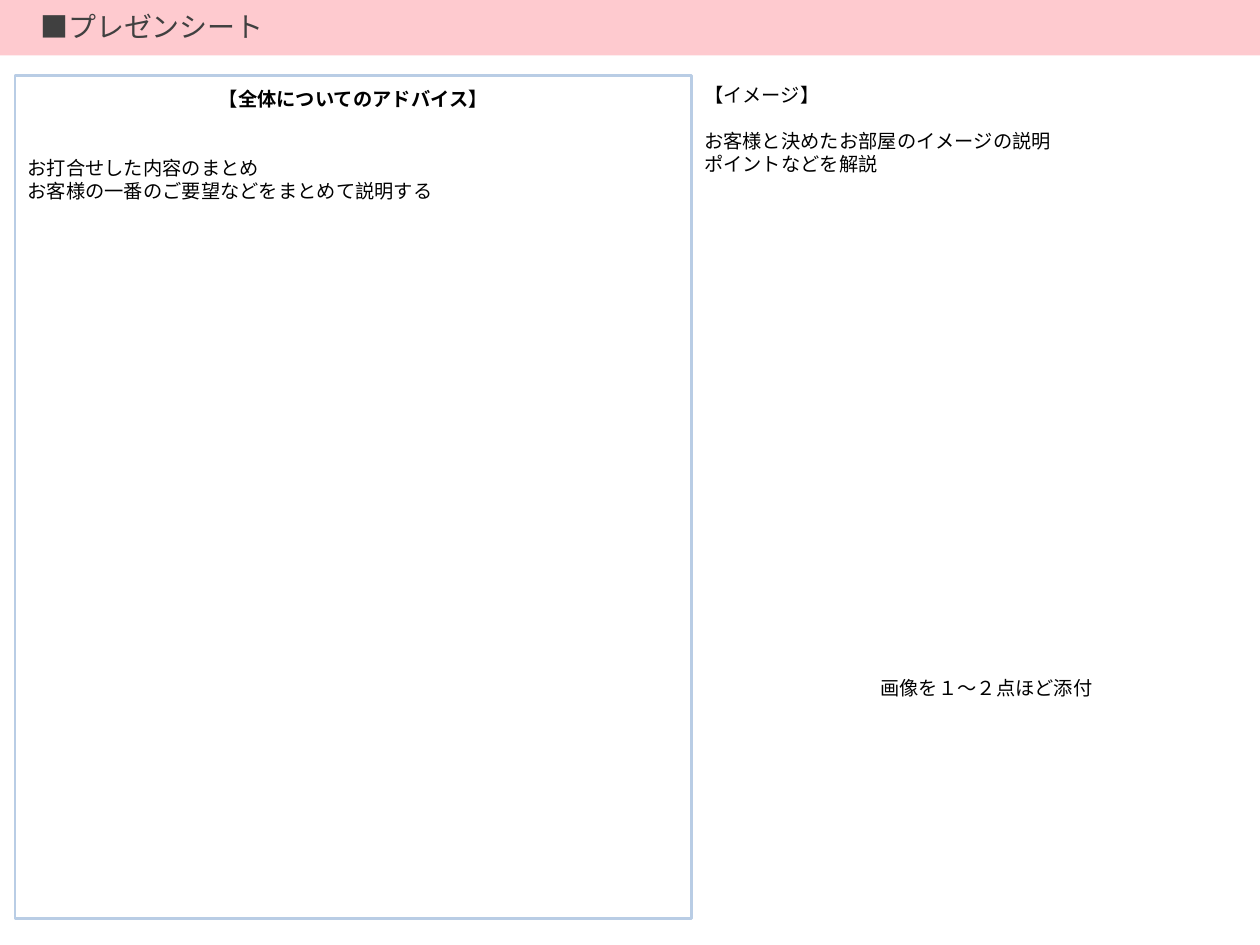
from pptx import Presentation
from pptx.dml.color import RGBColor
from pptx.enum.shapes import MSO_SHAPE
from pptx.enum.text import MSO_ANCHOR, PP_ALIGN
from pptx.oxml.ns import qn
from pptx.util import Inches, Pt
from lxml import etree

FONT = "Noto Sans CJK JP"
SIZE, PITCH = 11, 13.2  # body text size and line pitch, points
WIDTH, HEIGHT = 10, 7.5
LEFT, SPLIT = 0.12, 5.49  # edges of the advice column

TITLE = "■プレゼンシート"
# box, then paragraphs: text, bold, centred, lines of space before
TEXTS = [
    ((LEFT, 0.64, SPLIT - LEFT, 1.03), [
        ("【全体についてのアドバイス】", True, True, 0),
        ("お打合せした内容のまとめ", False, False, 2),
        ("お客様の一番のご要望などをまとめて説明する", False, False, 0)]),
    ((SPLIT, 0.61, 4.44, 0.84), [
        ("【イメージ】", False, False, 0),
        ("お客様と決めたお部屋のイメージの説明", False, False, 1),
        ("ポイントなどを解説", False, False, 0)]),
    ((6.42, 5.32, 2.82, 0.29), [
        ("画像を１～２点ほど添付", False, True, 0)]),
]


def rgb(value):
    return RGBColor.from_string(value)


def style(p, size, color, bold=False):
    for r in p.runs:
        r.font.name, r.font.size, r.font.bold = FONT, Pt(size), bold
        r.font.color.rgb = rgb(color)
        ea = etree.SubElement(r.font._element, qn("a:ea"))
        ea.set("typeface", FONT)


def add_text(slide, box, paragraphs):
    tf = slide.shapes.add_textbox(*map(Inches, box)).text_frame
    tf.word_wrap = True
    tf.text = "\n".join(text for text, *_ in paragraphs)
    for p, (_, bold, centred, gap) in zip(tf.paragraphs, paragraphs):
        p.alignment = PP_ALIGN.CENTER if centred else PP_ALIGN.LEFT
        p.line_spacing = Pt(PITCH)
        p.space_before = Pt(gap * PITCH)
        style(p, SIZE, "000000", bold)


prs = Presentation()
prs.slide_width, prs.slide_height = Inches(WIDTH), Inches(HEIGHT)
slide = prs.slides.add_slide(prs.slide_layouts[5])

# Title bar
title = slide.shapes.title
title.left, title.top, title.width, title.height = map(
    Inches, (0, -0.03, WIDTH, 0.47))
title.fill.solid()
title.fill.fore_color.rgb = rgb("FECACF")
tf = title.text_frame
tf.text = TITLE
tf.vertical_anchor = MSO_ANCHOR.MIDDLE
tf.margin_left = Inches(0.32)
tf.paragraphs[0].alignment = PP_ALIGN.LEFT
style(tf.paragraphs[0], 16, "404040")

# Advice frame
frame = slide.shapes.add_shape(
    MSO_SHAPE.RECTANGLE, *map(Inches, (LEFT, 0.6, SPLIT - LEFT, 6.69)))
frame.shadow.inherit = False
frame.fill.background()
frame.line.color.rgb = rgb("B9CDE5")
frame.line.width = Pt(1.5)

# Texts
for box, paragraphs in TEXTS:
    add_text(slide, box, paragraphs)

prs.save("out.pptx")
